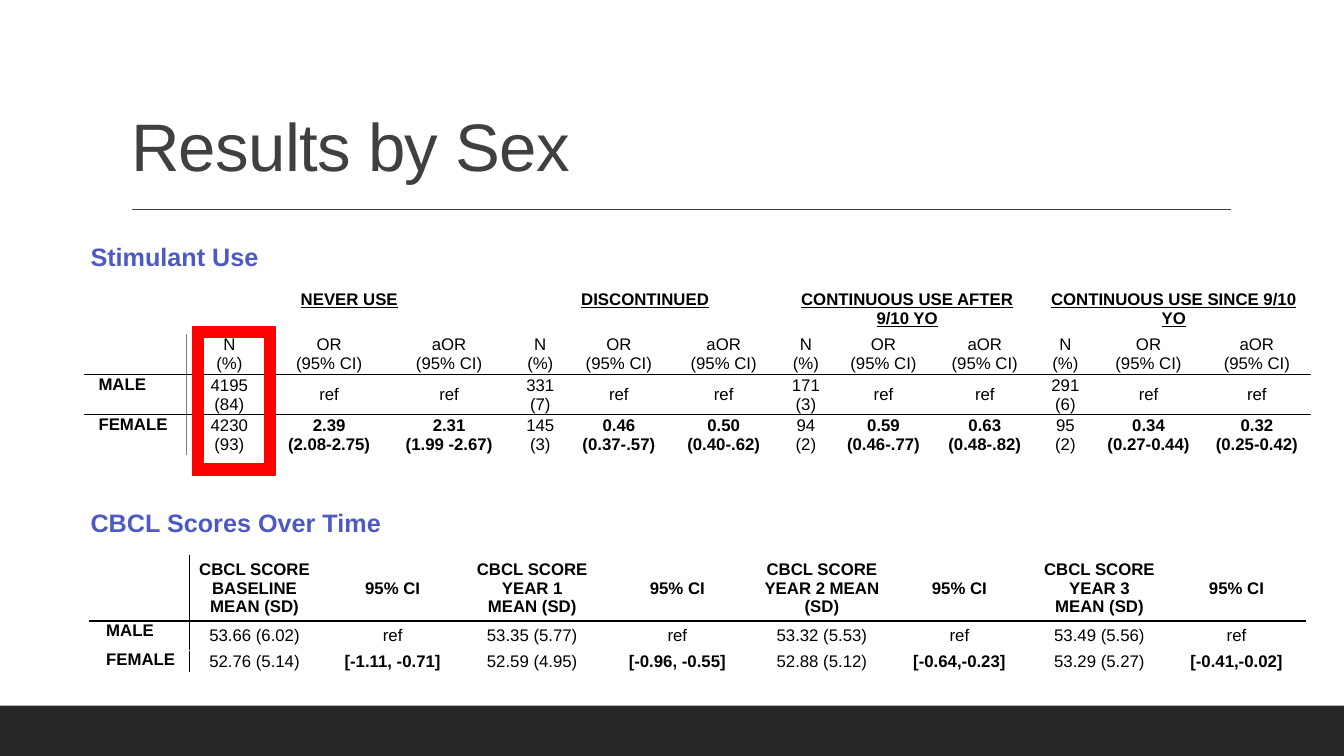
from lxml import etree
from pptx import Presentation
from pptx import util as u
from pptx.dml import color as dml
from pptx.enum import shapes, text
from pptx.oxml import ns

Pt = u.Pt
FONT = "Arial"
COLORS = {"white": "FFFFFF", "black": "000000", "title": "404040", "footer": "262626",
          "heading": "4D5AC3", "axis": "7F7F7F", "highlight": "FF0000"}
NO_GRID_STYLE = "{2D5ABB26-0587-4C30-8999-92F81FD0307C}"

STIMULANT_WIDTHS = [73.4, 61.2, 81.4, 90, 40.3, 72, 77.8, 39.6, 71.3, 73.4, 41.8, 77, 77.8]
RATIOS = ["OR\n(95% CI)", "aOR\n(95% CI)"]
STIMULANT_ROWS = [
    ["", "NEVER USE", "", "", "DISCONTINUED", "", "", "CONTINUOUS USE AFTER 9/10 YO", "", "",
     "CONTINUOUS USE SINCE 9/10 YO", "", ""],
    ["", "N\n(%)", *RATIOS] + ["N (%)", *RATIOS] * 3,
    ["MALE", "4195 (84)", "ref", "ref", "331 (7)", "ref", "ref", "171 (3)", "ref", "ref",
     "291 (6)", "ref", "ref"],
    ["FEMALE", "4230 (93)", "2.39\n(2.08-2.75)", "2.31\n(1.99 -2.67)",
     "145 (3)", "0.46\n(0.37-.57)", "0.50\n(0.40-.62)",
     "94 (2)", "0.59\n(0.46-.77)", "0.63\n(0.48-.82)",
     "95\n(2)", "0.34\n(0.27-0.44)", "0.32\n(0.25-0.42)"],
]
CBCL_WIDTHS = [71.3, 92.9, 104.4, 95, 112.3, 94.3, 102.2, 97.9, 97.9]
CBCL_ROWS = [
    ["", "CBCL SCORE\nBASELINE\nMEAN (SD)", "95% CI", "CBCL SCORE\nYEAR 1\nMEAN (SD)", "95% CI",
     "CBCL SCORE\nYEAR 2 MEAN (SD)", "95% CI", "CBCL SCORE\nYEAR 3\nMEAN (SD)", "95% CI"],
    ["MALE", "53.66 (6.02)", "ref", "53.35 (5.77)", "ref", "53.32 (5.53)", "ref",
     "53.49 (5.56)", "ref"],
    ["FEMALE", "52.76 (5.14)", "[-1.11, -0.71]", "52.59 (4.95)", "[-0.96, -0.55]",
     "52.88 (5.12)", "[-0.64,-0.23]", "53.29 (5.27)", "[-0.41,-0.02]"],
]


def rgb(name):
    """Return the named colour."""
    return dml.RGBColor.from_string(COLORS[name])


def style_runs(frame, size, color, bold=False, underline=False):
    """Format every run of a text frame."""
    for paragraph in frame.paragraphs:
        for run in paragraph.runs:
            font = run.font
            font.name, font.size, font.bold, font.underline = FONT, Pt(size), bold, underline
            font.color.rgb = rgb(color)


def add_filled(slide, kind, box, color, line_width=0):
    """Add a flat preset shape, outlined in its own colour when a width is given."""
    shape = slide.shapes.add_shape(kind, *map(Pt, box))
    shape.shadow.inherit = False
    shape.fill.solid()
    shape.fill.fore_color.rgb = rgb(color)
    if line_width:
        shape.line.color.rgb = rgb(color)
        shape.line.width = Pt(line_width)
    else:
        shape.line.fill.background()
    return shape


def add_header(slide, box):
    """Place the title in its box and the rule beneath it."""
    left, top, width, height = box
    title = slide.shapes.title
    title.left, title.top, title.width, title.height = map(Pt, box)
    frame = title.text_frame
    frame.text = "Results by Sex"
    frame.auto_size = text.MSO_AUTO_SIZE.NONE
    frame.vertical_anchor = text.MSO_ANCHOR.BOTTOM
    frame.paragraphs[0].alignment = text.PP_ALIGN.LEFT
    frame.paragraphs[0].line_spacing = 0.9
    style_runs(frame, 48, "title")
    frame.paragraphs[0].runs[0].font._element.set("spc", "-50")

    rule_top = top + height + 13
    rule = slide.shapes.add_connector(
        shapes.MSO_CONNECTOR.STRAIGHT,
        Pt(left + 7.9), Pt(rule_top), Pt(left + width + 0.7), Pt(rule_top))
    rule.line.color.rgb = rgb("title")
    rule.line.width = Pt(1)
    etree.SubElement(rule.element.spPr, ns.qn("a:effectLst"))


def add_heading(slide, box, words):
    """Add a section heading."""
    heading = slide.shapes.add_textbox(*map(Pt, box))
    frame = heading.text_frame
    frame.word_wrap = True
    frame.auto_size = text.MSO_AUTO_SIZE.SHAPE_TO_FIT_TEXT
    frame.text = words
    style_runs(frame, 18, "heading", bold=True)


def set_borders(cell, borders):
    """Draw the given cell borders, keyed by side."""
    properties = cell._tc.get_or_add_tcPr()
    sides = [side for side in "LRTB" if side in borders]
    for position, side in enumerate(sides):
        line = etree.Element(ns.qn(f"a:ln{side}"), w=str(Pt(1)))
        fill = etree.SubElement(line, ns.qn("a:solidFill"))
        etree.SubElement(fill, ns.qn("a:srgbClr"), val=COLORS[borders[side]])
        properties.insert(position, line)


def add_results(slide, origin, widths, heights, rows, group, margins, label_left,
                axis, head_row, outline=None):
    """Add a results table whose columns repeat in groups after the label column."""
    graphic = slide.shapes.add_table(
        len(rows), len(widths), *map(Pt, (*origin, sum(widths), sum(heights))))
    table = graphic.table
    table.first_row = table.horz_banding = False
    graphic.element.find(".//" + ns.qn("a:tableStyleId")).text = NO_GRID_STYLE
    for column, width in zip(table.columns, widths):
        column.width = Pt(width)
    for row, height in zip(table.rows, heights):
        row.height = Pt(height)

    for r, words_row in enumerate(rows):
        for c, words in enumerate(words_row):
            cell = table.cell(r, c)
            cell.fill.background()
            grouped_head = r < head_row
            side, top = (9.4, 4.3) if grouped_head else margins
            cell.margin_left = Pt(side if c else label_left)
            cell.margin_right = Pt(side)
            cell.margin_top = Pt(top)
            cell.margin_bottom = Pt(top if grouped_head else 0)
            frame = cell.text_frame
            frame.text = words
            if c:
                for paragraph in frame.paragraphs:
                    paragraph.alignment = text.PP_ALIGN.CENTER
                if not grouped_head:
                    cell.vertical_anchor = text.MSO_ANCHOR.MIDDLE
            estimate = r == len(rows) - 1 and (c - 1) % group != 0
            style_runs(frame, 12, "black", r == 0 or c == 0 or estimate, grouped_head)

            borders = dict.fromkeys("LRTB", outline) if outline else {}
            if not grouped_head and c < 2:
                borders["L" if c else "R"] = axis
            if r in (head_row, head_row + 1):
                borders["B" if r == head_row else "T"] = "black"
            set_borders(cell, borders)

    if head_row:
        for first in range(1, len(widths), group):
            table.cell(0, first).merge(table.cell(0, first + group - 1))


def add_stimulant_use(slide, box):
    """Place the stimulant use heading, table and highlight frame."""
    left, top = box
    add_results(slide, (left + 2.2, top + 34.5), STIMULANT_WIDTHS, [28.8] * 4, STIMULANT_ROWS,
                3, (7.2, 0.7), 10.6, "axis", 1)
    add_filled(slide, shapes.MSO_SHAPE.FRAME, (left + 79.9, top + 64.8, 59, 105.8),
               "highlight", 1.25)
    add_heading(slide, (left, top, 322.6, 28.8), "Stimulant Use")


def add_cbcl_scores(slide, box):
    """Place the CBCL heading and table."""
    left, top = box
    add_results(slide, (left + 6.5, top + 38.2), CBCL_WIDTHS, [46.8, 20.9, 15.8], CBCL_ROWS,
                2, (5, 0), 11.8, "black", 0, "white")
    add_heading(slide, (left, top, 311, 28.8), "CBCL Scores Over Time")


def main():
    """Build and save the slide."""
    deck = Presentation()
    deck.slide_width, deck.slide_height = Pt(960), Pt(540)
    slide = deck.slides.add_slide(deck.slide_layouts[5])
    backdrop = add_filled(slide, shapes.MSO_SHAPE.RECTANGLE, (0, 0, 960, 540), "white")
    backdrop.element.addnext(slide.shapes.title.element)
    add_header(slide, (86.4, 22.3, 792, 114.5))
    add_filled(slide, shapes.MSO_SHAPE.RECTANGLE, (0, 504, 960, 36), "footer")
    add_stimulant_use(slide, (57.6, 168.5))
    add_cbcl_scores(slide, (57.6, 358.5))
    deck.save("out.pptx")


if __name__ == "__main__":
    main()
